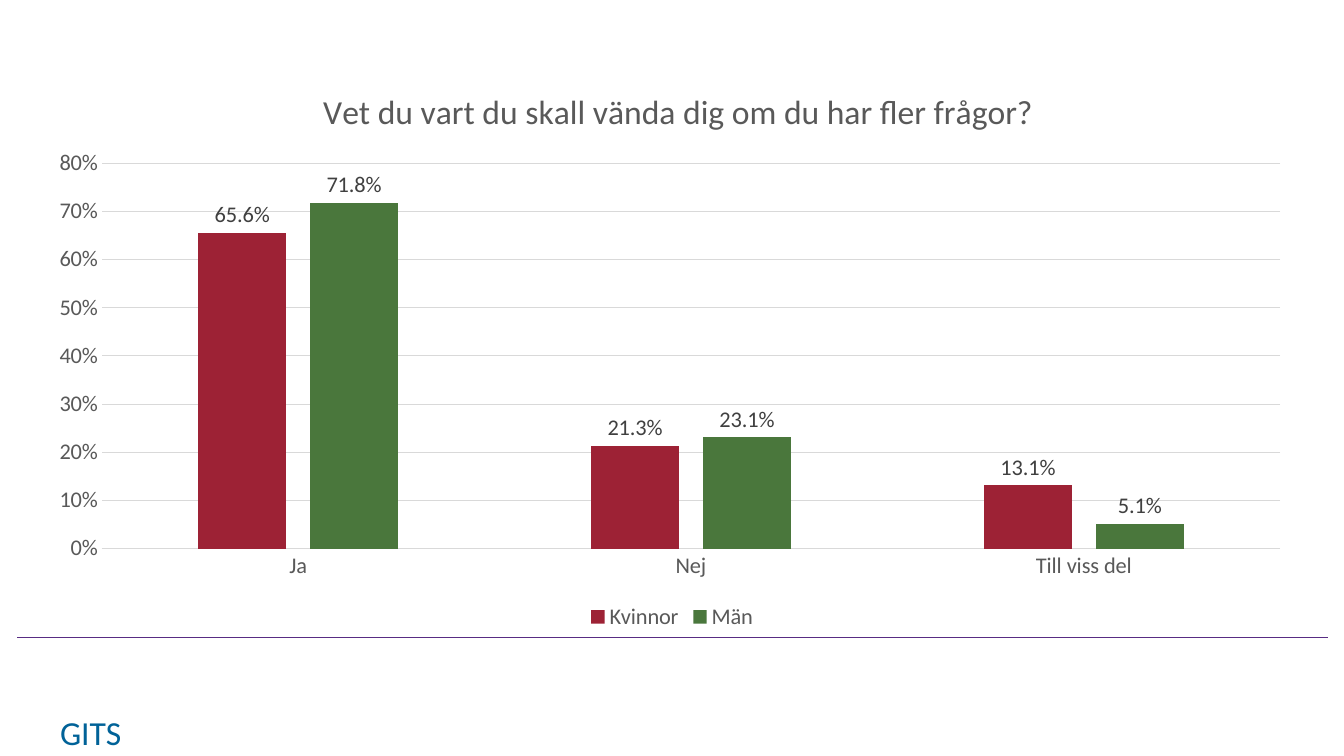
import pptx
import pptx.chart.data
import pptx.dml.color
import pptx.enum.chart
import pptx.enum.shapes
import pptx.enum.text
import pptx.oxml
import pptx.oxml.ns
import pptx.util
from dataclasses import dataclass

WIDTH, HEIGHT = 13.33, 7.5


@dataclass(frozen=True)
class Theme:
    font: str = "Calibri"
    title_size: int = 24
    body_size: int = 16
    text: str = "595959"
    label: str = "404040"
    grid: str = "D9D9D9"
    rule: str = "582C83"
    mark: str = "006298"
    women: str = "9D2235"
    men: str = "4A773C"


THEME = Theme()
CATEGORIES = ("Ja", "Nej", "Till viss del")
SERIES = (
    ("Kvinnor", (0.656, 0.213, 0.131), THEME.women),
    ("Män", (0.718, 0.231, 0.051), THEME.men),
)


def rgb(value):
    return pptx.dml.color.RGBColor.from_string(value)


def share(x, y, w, h):
    """Turn shares of the slide's size into lengths."""
    return [pptx.util.Inches(part * full)
            for part, full in zip((x, y, w, h), (WIDTH, HEIGHT) * 2)]


def set_all(target, values):
    for name, value in values.items():
        setattr(target, name, value)


def style_font(font, color, size=THEME.body_size):
    set_all(font, {"name": THEME.font, "size": pptx.util.Pt(size), "bold": False})
    font.color.rgb = rgb(color)


def style_line(line, color, width):
    line.color.rgb = rgb(color)
    line.width = pptx.util.Pt(width)


def place(element, position, **shares):
    """Fix a chart part at shares of the chart's size."""
    for old in element.findall(pptx.oxml.ns.qn("c:layout")):
        element.remove(old)
    values = "".join(f'<c:{k} val="{v}"/>' for k, v in shares.items())
    target = '<c:layoutTarget val="inner"/>' if "w" in shares else ""
    element.insert(position, pptx.oxml.parse_xml(
        f'<c:layout {pptx.oxml.ns.nsdecls("c")}><c:manualLayout>{target}'
        f'<c:xMode val="edge"/><c:yMode val="edge"/>{values}'
        '</c:manualLayout></c:layout>'))


def style_axes(chart):
    none = pptx.enum.chart.XL_TICK_MARK.NONE
    for axis in (chart.category_axis, chart.value_axis):
        set_all(axis, {"major_tick_mark": none, "minor_tick_mark": none})
        style_font(axis.tick_labels.font, THEME.text)
    style_line(chart.category_axis.format.line, THEME.grid, 0.75)
    axis = chart.value_axis
    set_all(axis, {"minimum_scale": 0, "maximum_scale": 0.8, "major_unit": 0.1,
                   "has_major_gridlines": True})
    set_all(axis.tick_labels, {"number_format": "0%", "number_format_is_linked": False})
    axis.format.line.fill.background()
    style_line(axis.major_gridlines.format.line, THEME.grid, 0.75)


def style_series(plot):
    set_all(plot, {"gap_width": 219, "overlap": -27, "vary_by_categories": False})
    for series, (_, _, color) in zip(plot.series, SERIES):
        series.format.fill.solid()
        series.format.fill.fore_color.rgb = rgb(color)
        labels = series.data_labels
        set_all(labels, {"show_value": True, "number_format": "0.0%",
                         "number_format_is_linked": False,
                         "position": pptx.enum.chart.XL_LABEL_POSITION.OUTSIDE_END})
        style_font(labels.font, THEME.label)


def add_title(chart, text):
    chart.has_title = True
    title = chart.chart_title
    title.include_in_layout = False
    p = title.text_frame.paragraphs[0]
    r = p.add_run()
    r.text = text
    style_font(r.font, THEME.text, THEME.title_size)
    place(title.element, 1, x=0.22, y=0.04)


def add_column_chart(s, box, title):
    data = pptx.chart.data.CategoryChartData(number_format="0.0%")
    data.categories = CATEGORIES
    for name, values, _ in SERIES:
        data.add_series(name, values)
    chart = s.shapes.add_chart(
        pptx.enum.chart.XL_CHART_TYPE.COLUMN_CLUSTERED, *share(*box), data).chart
    style_font(chart.font, THEME.text)
    add_title(chart, title)
    style_axes(chart)
    style_series(chart.plots[0])
    chart.has_legend = True
    set_all(chart.legend, {"position": pptx.enum.chart.XL_LEGEND_POSITION.BOTTOM,
                           "include_in_layout": False})
    style_font(chart.legend.font, THEME.text)
    plot_area = chart.element.find(".//" + pptx.oxml.ns.qn("c:plotArea"))
    place(plot_area, 0, x=0.05, y=0.18, w=0.93, h=0.67)


def add_rule(s, left, y, right):
    x1, y1, x2, y2 = share(left, y, right, y)
    line = s.shapes.add_connector(
        pptx.enum.shapes.MSO_CONNECTOR.STRAIGHT, x1, y1, x2, y2)
    style_line(line.line, THEME.rule, 1)
    line.element.spPr.append(pptx.oxml.parse_xml(
        f'<a:effectLst {pptx.oxml.ns.nsdecls("a")}/>'))


def add_mark(s, box, text):
    tf = s.shapes.add_textbox(*share(*box)).text_frame
    set_all(tf, {"word_wrap": False,
                 "auto_size": pptx.enum.text.MSO_AUTO_SIZE.SHAPE_TO_FIT_TEXT})
    p = tf.paragraphs[0]
    p.alignment = pptx.enum.text.PP_ALIGN.CENTER
    r = p.add_run()
    r.text = text
    style_font(r.font, THEME.mark, THEME.title_size)


def main():
    prs = pptx.Presentation()
    set_all(prs, {"slide_width": pptx.util.Inches(WIDTH),
                  "slide_height": pptx.util.Inches(HEIGHT)})
    s = prs.slides.add_slide(prs.slide_layouts.get_by_name("Blank"))
    add_mark(s, (0.035, 0.935, 0.065, 0.067), "GITS")
    add_rule(s, 0.013, 0.843, 0.988)
    add_column_chart(s, (0.0285, 0.079, 0.943, 0.761),
                     "Vet du vart du skall vända dig om du har fler frågor?")
    prs.save("out.pptx")


if __name__ == "__main__":
    main()
